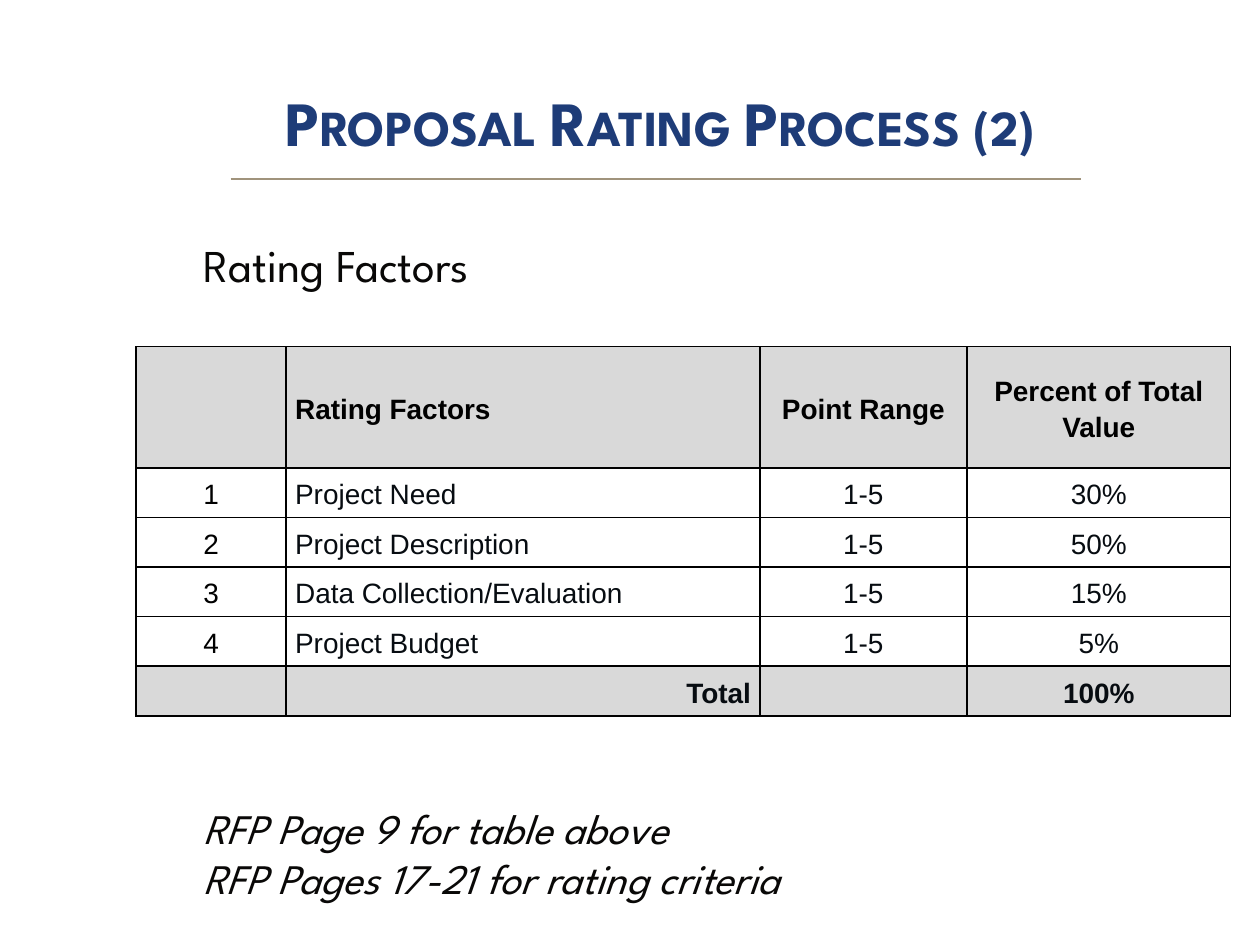
from lxml.etree import SubElement
from pptx import Presentation
from pptx.dml.color import RGBColor
from pptx.enum.shapes import MSO_CONNECTOR
from pptx.enum.text import MSO_ANCHOR as Anchor, PP_ALIGN as Align
from pptx.oxml.ns import qn
from pptx.util import Cm, Pt

NAVY = RGBColor(0x1E, 0x3C, 0x78)
TAN = RGBColor(0xA0, 0x93, 0x7C)
INK = RGBColor(0x09, 0x08, 0x07)
CELL_INK = RGBColor(0x07, 0x0C, 0x11)
BLACK = RGBColor(0, 0, 0)
GRAY = RGBColor(0xD9, 0xD9, 0xD9)


def write_text(frame, text, size, color, font="League Spartan", bold=False,
               italic=False, small_caps=False, align=Align.LEFT, spacing=None):
    """Fill a text frame, one paragraph for each line of text."""
    frame.word_wrap = True
    for index, line in enumerate(text.split("\n")):
        paragraph = frame.paragraphs[0] if index == 0 else frame.add_paragraph()
        paragraph.alignment = align
        paragraph.line_spacing = spacing
        run = paragraph.add_run()
        run.text = line
        run.font.name = font
        run.font.size = Pt(size)
        run.font.bold = bold
        run.font.italic = italic
        run.font.color.rgb = color
        if small_caps:
            run.font._element.set("cap", "small")


def add_borders(cell, color, width):
    properties = cell._tc.get_or_add_tcPr()
    for position, side in enumerate(("lnL", "lnR", "lnT", "lnB")):
        border = SubElement(properties, qn(f"a:{side}"), w=str(Pt(width)))
        fill = SubElement(border, qn("a:solidFill"))
        SubElement(fill, qn("a:srgbClr"), val=str(color))
        properties.insert(position, border)


prs = Presentation()
prs.slide_width, prs.slide_height = Cm(25.4), Cm(19.05)
slide = prs.slides.add_slide(prs.slide_layouts[6])

# Title and rule
title = slide.shapes.add_textbox(Cm(1.32), Cm(1.27), Cm(22.86), Cm(2.34)).text_frame
title.vertical_anchor = Anchor.MIDDLE
title.margin_left = Cm(1.37)
title.margin_top = title.margin_bottom = 0
write_text(title, "Proposal Rating Process (2)", 36, NAVY, bold=True,
           small_caps=True, align=Align.CENTER)

rule = slide.shapes.add_connector(MSO_CONNECTOR.STRAIGHT,
                                  Cm(4.65), Cm(3.61), Cm(21.8), Cm(3.61))
rule.line.color.rgb = TAN
rule.line.width = Pt(0.75)
SubElement(rule._element.spPr, qn("a:effectLst"))

# Text above and below the table
heading = slide.shapes.add_textbox(Cm(3.86), Cm(4.65), Cm(20.32), Cm(1.4)).text_frame
write_text(heading, "Rating Factors", 26, INK)
references = slide.shapes.add_textbox(Cm(3.86), Cm(16.05), Cm(20.32), Cm(2.3)).text_frame
write_text(references, "RFP Page 9 for table above\nRFP Pages 17-21 for rating criteria",
           24, INK, italic=True)

# Rating table
ratings = [
    ("", "Rating Factors", "Point Range", "Percent of Total Value"),
    ("1", "Project Need", "1-5", "30%"),
    ("2", "Project Description", "1-5", "50%"),
    ("3", "Data Collection/Evaluation", "1-5", "15%"),
    ("4", "Project Budget", "1-5", "5%"),
    ("", "Total", "", "100%"),
]
column_widths = (3.03, 9.55, 4.17, 5.32)
row_heights = [2.44] + [1] * 5
last_row = len(ratings) - 1
factor_align = {0: Align.JUSTIFY, last_row: Align.RIGHT}

table = slide.shapes.add_table(len(ratings), len(column_widths), Cm(2.74), Cm(6.99),
                               Cm(sum(column_widths)), Cm(sum(row_heights))).table
table.first_row = table.horz_banding = False
for column, width in zip(table.columns, column_widths):
    column.width = Cm(width)

for r, values in enumerate(ratings):
    table.rows[r].height = Cm(row_heights[r])
    shaded = r in (0, last_row)
    for c, value in enumerate(values):
        cell = table.cell(r, c)
        cell.vertical_anchor = Anchor.MIDDLE
        cell.margin_top = cell.margin_bottom = 0
        cell.margin_left = cell.margin_right = Cm(0.18 if c else 0)
        if shaded:
            cell.fill.solid()
            cell.fill.fore_color.rgb = GRAY
        else:
            cell.fill.background()
        add_borders(cell, BLACK, 1)
        if value:
            write_text(cell.text_frame, value, 16,
                       BLACK if r == 0 or c == 0 else CELL_INK,
                       font="Arial", bold=shaded, spacing=1.15,
                       align=factor_align.get(r, Align.LEFT) if c == 1 else Align.CENTER)

prs.save("out.pptx")
